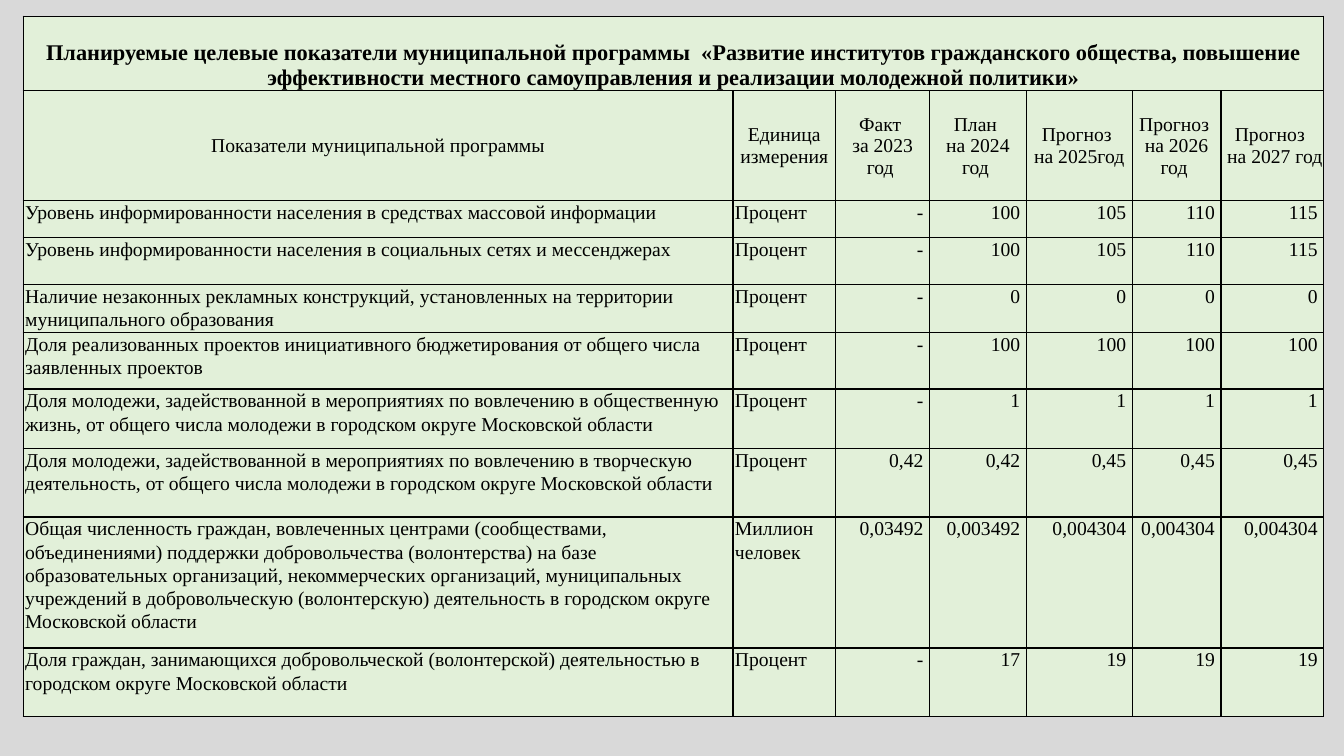
from dataclasses import dataclass

from lxml.etree import SubElement
from pptx import Presentation
from pptx.dml.color import RGBColor
from pptx.enum.text import MSO_ANCHOR, PP_ALIGN
from pptx.oxml.ns import qn
from pptx.util import Inches, Pt


@dataclass(frozen=True)
class Theme:
    background: str = "D9D9D9"
    cell: str = "E2F0D9"
    ink: str = "000000"
    font: str = "Times New Roman"
    title_size: int = 16
    body_size: int = 14
    border: int = 1
    line_spacing: float = 1.07


THEME = Theme()

TITLE = ("Планируемые целевые показатели муниципальной программы  «Развитие институтов "
         "гражданского общества, повышение эффективности местного самоуправления и "
         "реализации молодежной политики»")
HEADINGS = [
    ["Показатели муниципальной программы"],
    ["Единица измерения"],
    ["Факт ", "за 2023 год "],
    ["План ", "на 2024 год "],
    ["Прогноз ", " на 2025год "],
    ["Прогноз ", "на 2026 год "],
    ["Прогноз ", " на 2027 год "],
]
INDICATORS = [
    ("Уровень информированности населения в средствах массовой информации",
     "Процент", "-", "100", "105", "110", "115"),
    ("Уровень информированности населения в социальных сетях и мессенджерах",
     "Процент", "-", "100", "105", "110", "115"),
    ("Наличие незаконных рекламных конструкций, установленных на территории "
     "муниципального образования",
     "Процент", "-", "0", "0", "0", "0"),
    ("Доля реализованных проектов инициативного бюджетирования от общего числа "
     "заявленных проектов",
     "Процент", "-", "100", "100", "100", "100"),
    ("Доля молодежи, задействованной в мероприятиях по вовлечению в общественную жизнь, "
     "от общего числа молодежи в городском округе Московской области",
     "Процент", "-", "1", "1", "1", "1"),
    ("Доля молодежи, задействованной в мероприятиях по вовлечению в творческую "
     "деятельность, от общего числа молодежи в городском округе Московской области",
     "Процент", "0,42", "0,42", "0,45", "0,45", "0,45"),
    ("Общая численность граждан, вовлеченных центрами (сообществами, объединениями) "
     "поддержки добровольчества (волонтерства) на базе образовательных организаций, "
     "некоммерческих организаций, муниципальных учреждений в добровольческую "
     "(волонтерскую) деятельность в городском округе Московской области",
     "Миллион человек", "0,03492", "0,003492", "0,004304", "0,004304", "0,004304"),
    ("Доля граждан, занимающихся добровольческой (волонтерской) деятельностью в "
     "городском округе Московской области",
     "Процент", "-", "17", "19", "19", "19"),
]
COLUMN_WIDTHS = [7.04, 1.02, 0.93, 0.96, 1.05, 0.88, 1.02]
ROW_HEIGHTS = [0.74, 1.09, 0.37, 0.46, 0.48, 0.56, 0.59, 0.68, 1.3, 0.68]


def style_cell(cell):
    """Draw the four borders, then the fill."""
    properties = cell._tc.get_or_add_tcPr()
    for side in ("a:lnL", "a:lnR", "a:lnT", "a:lnB"):
        border = SubElement(properties, qn(side), w=str(Pt(THEME.border)))
        SubElement(SubElement(border, qn("a:solidFill")), qn("a:srgbClr"), val=THEME.ink)
    cell.fill.solid()
    cell.fill.fore_color.rgb = RGBColor.from_string(THEME.cell)


def write_cell(cell, lines, align, anchor, margins, size=THEME.body_size,
               bold=False, spacing=None):
    left, top, right, bottom = map(Inches, margins)
    cell.margin_left, cell.margin_top = left, top
    cell.margin_right, cell.margin_bottom = right, bottom
    cell.vertical_anchor = anchor
    frame = cell.text_frame
    for index, line in enumerate(lines):
        paragraph = frame.add_paragraph() if index else frame.paragraphs[0]
        paragraph.alignment = align
        if spacing:
            paragraph.line_spacing = spacing
        run = paragraph.add_run()
        run.text = line
        run.font.name = THEME.font
        run.font.size = Pt(size)
        run.font.bold = bold
        run.font.color.rgb = RGBColor.from_string(THEME.ink)


def add_indicator_table(slide, left, top, width, height):
    frame = slide.shapes.add_table(len(ROW_HEIGHTS), len(COLUMN_WIDTHS), Inches(left),
                                   Inches(top), Inches(width), Inches(height))
    table = frame.table
    table.first_row = table.horz_banding = False
    for column, column_width in zip(table.columns, COLUMN_WIDTHS):
        column.width = Inches(column_width)
    for row, row_height in zip(table.rows, ROW_HEIGHTS):
        row.height = Inches(row_height)
    for cell in table.iter_cells():
        style_cell(cell)

    # Title across all columns, then the column headings
    heading_margins = (0.01, 0.01, 0.01, 0)
    title = table.cell(0, 0)
    title.merge(table.cell(0, len(COLUMN_WIDTHS) - 1))
    write_cell(title, [TITLE], PP_ALIGN.CENTER, MSO_ANCHOR.BOTTOM, heading_margins,
               THEME.title_size, bold=True)
    for column, lines in enumerate(HEADINGS):
        write_cell(table.cell(1, column), lines, PP_ALIGN.CENTER, MSO_ANCHOR.MIDDLE,
                   heading_margins)

    # Indicators: name and unit on the left, yearly values on the right
    for row, indicator in enumerate(INDICATORS, start=2):
        for column, entry in enumerate(indicator):
            if column < 2:
                align, margins = PP_ALIGN.LEFT, (0.02, 0, 0, 0)
            else:
                align, margins = PP_ALIGN.RIGHT, (0, 0, 0.06, 0)
            write_cell(table.cell(row, column), [entry], align, MSO_ANCHOR.TOP, margins,
                       spacing=THEME.line_spacing)


def main():
    presentation = Presentation()
    presentation.slide_width = Inches(13.33)
    presentation.slide_height = Inches(7.5)
    slide = presentation.slides.add_slide(presentation.slide_layouts[6])
    slide.background.fill.solid()
    slide.background.fill.fore_color.rgb = RGBColor.from_string(THEME.background)
    add_indicator_table(slide, 0.23, 0.16, sum(COLUMN_WIDTHS), sum(ROW_HEIGHTS))
    presentation.save("out.pptx")


if __name__ == "__main__":
    main()
